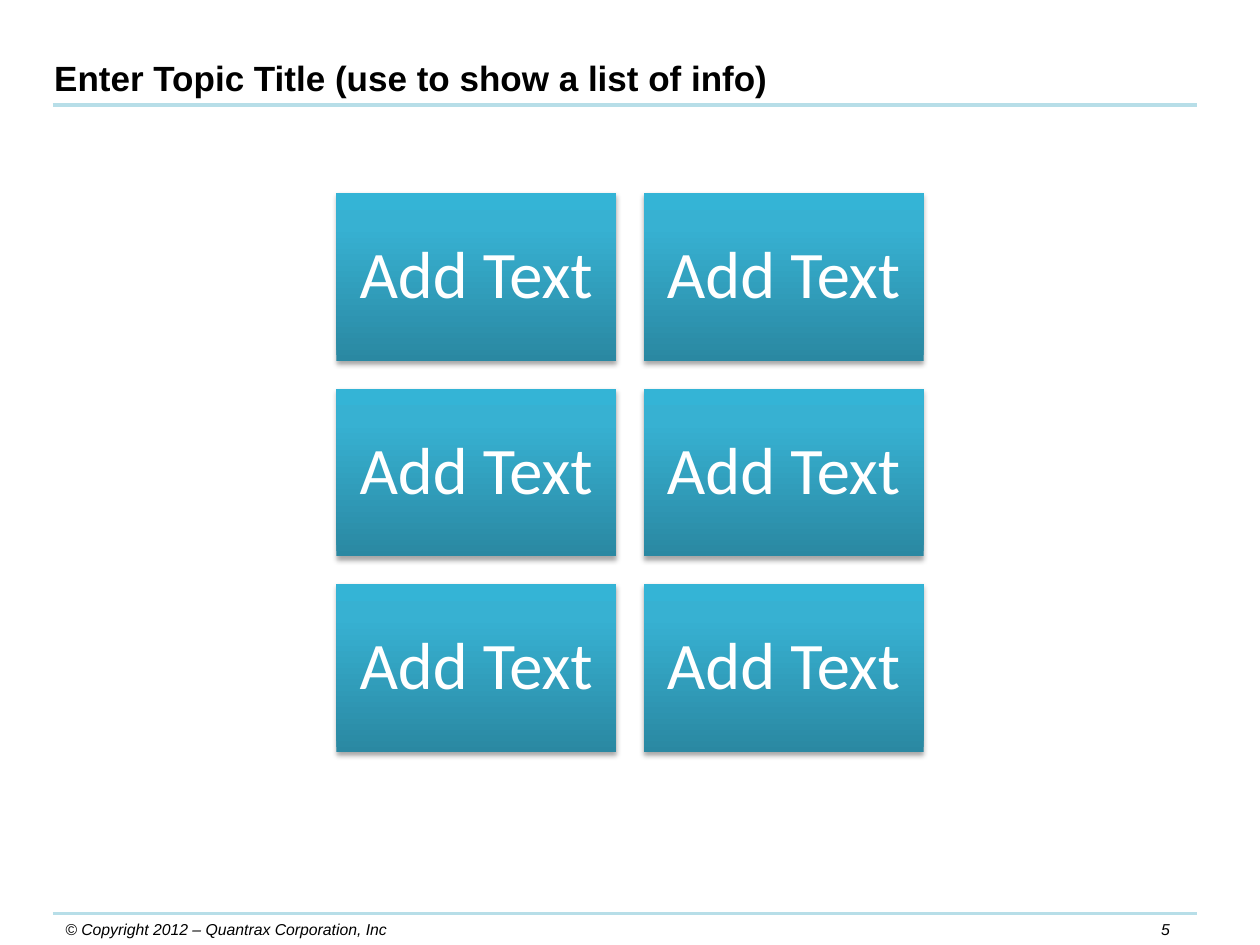
from copy import deepcopy
from dataclasses import dataclass

from lxml.etree import SubElement
from pptx import Presentation
from pptx.dml.color import RGBColor as RGB
from pptx.enum.shapes import MSO_CONNECTOR as Link, MSO_SHAPE as Shape
from pptx.enum.text import MSO_ANCHOR as Anchor, PP_ALIGN as Align
from pptx.oxml.ns import qn
from pptx.util import Inches, Pt


@dataclass(frozen=True)
class Theme:
    ink: RGB = RGB(0, 0, 0)
    rule: RGB = RGB.from_string("B7DEE8")
    light: RGB = RGB(255, 255, 255)
    stops: tuple = ((0, "2A88A2"), (0.8, "37B1D2"), (1, "34B4D6"))
    head: str = "Arial"
    body: str = "Calibri"
    title: int = 20
    tile: int = 38
    note: int = 9


THEME = Theme()


def style(para, face, size, color, bold=False, italic=False, align=Align.LEFT):
    para.alignment = align
    for run in para.runs:
        font = run.font
        font.name, font.size, font.color.rgb = face, Pt(size), color
        font.bold, font.italic = bold, italic


def place(shape, left, top, width, height):
    shape.left, shape.top = Inches(left), Inches(top)
    shape.width, shape.height = Inches(width), Inches(height)


def add_rule(slide, left, top, width):
    line = slide.shapes.add_connector(
        Link.STRAIGHT, Inches(left), Inches(top), Inches(left + width), Inches(top))
    line.line.color.rgb = THEME.rule
    line.line.width = Pt(2.25)
    SubElement(line._element.spPr, qn("a:effectLst"))


def add_title(slide, text, left, top, width, height):
    title = slide.shapes.title
    place(title, left, top, width, height)
    frame = title.text_frame
    frame.text = text
    frame.word_wrap = True
    frame.vertical_anchor = Anchor.TOP
    style(frame.paragraphs[0], THEME.head, THEME.title, THEME.ink, bold=True)


def add_note(slide, text, left, top, width, height, align):
    box = slide.shapes.add_textbox(
        Inches(left), Inches(top), Inches(width), Inches(height))
    frame = box.text_frame
    frame.word_wrap = True
    frame.text = text
    style(frame.paragraphs[0], THEME.head, THEME.note, THEME.ink,
          italic=True, align=align)


def add_footer(slide, left, top, width, height):
    add_rule(slide, left, top, width)
    add_note(slide, "© Copyright 2012 – Quantrax Corporation, Inc",
             left, top, 3.25, height, Align.LEFT)
    add_note(slide, "5", left + width - 0.5, top, 0.5, height, Align.CENTER)


def shade(shape):
    """Give the shape the theme gradient, dark at the foot, and a soft shadow."""
    fill = shape.fill
    fill.gradient()
    fill.gradient_angle = 90
    last = fill.gradient_stops[-1]._gs
    last.addnext(deepcopy(last))
    for stop, (pos, color) in zip(fill.gradient_stops, THEME.stops):
        stop.position = pos
        stop.color.rgb = RGB.from_string(color)
    shape.line.fill.background()
    shape.shadow.inherit = False
    effects = shape._element.spPr.find(qn("a:effectLst"))
    shadow = SubElement(effects, qn("a:outerShdw"), blurRad=str(Pt(3.1)),
                        dist=str(Pt(1.8)), dir="5400000", rotWithShape="0")
    black = SubElement(shadow, qn("a:srgbClr"), val="000000")
    SubElement(black, qn("a:alpha"), val="35000")


def add_tile(slide, text, left, top, width, height):
    tile = slide.shapes.add_shape(
        Shape.RECTANGLE, Inches(left), Inches(top), Inches(width), Inches(height))
    shade(tile)
    frame = tile.text_frame
    frame.word_wrap = True
    frame.vertical_anchor = Anchor.MIDDLE
    frame.margin_left = frame.margin_right = Inches(0.16)
    frame.margin_top = frame.margin_bottom = Inches(0.16)
    frame.text = text
    para = frame.paragraphs[0]
    para.line_spacing = 0.9
    style(para, THEME.body, THEME.tile, THEME.light, align=Align.CENTER)


def add_grid(slide, texts, left, top, width, height, cols=2, gap=0.22):
    rows = -(-len(texts) // cols)
    wide = (width - gap * (cols - 1)) / cols
    high = (height - gap * (rows - 1)) / rows
    for i, text in enumerate(texts):
        row, col = divmod(i, cols)
        add_tile(slide, text, left + col * (wide + gap),
                 top + row * (high + gap), wide, high)


def main():
    deck = Presentation()
    deck.slide_width, deck.slide_height = Inches(10), Inches(7.5)
    slide = deck.slides.add_slide(deck.slide_layouts[5])
    add_rule(slide, 0.42, 0.83, 9.08)
    add_footer(slide, 0.42, 7.25, 9.08, 0.25)
    add_grid(slide, ["Add Text"] * 6, 2.67, 1.53, 4.66, 4.44)
    add_title(slide, "Enter Topic Title (use to show a list of info)",
              0.33, 0.4, 6.33, 0.44)
    deck.save("out.pptx")


if __name__ == "__main__":
    main()
